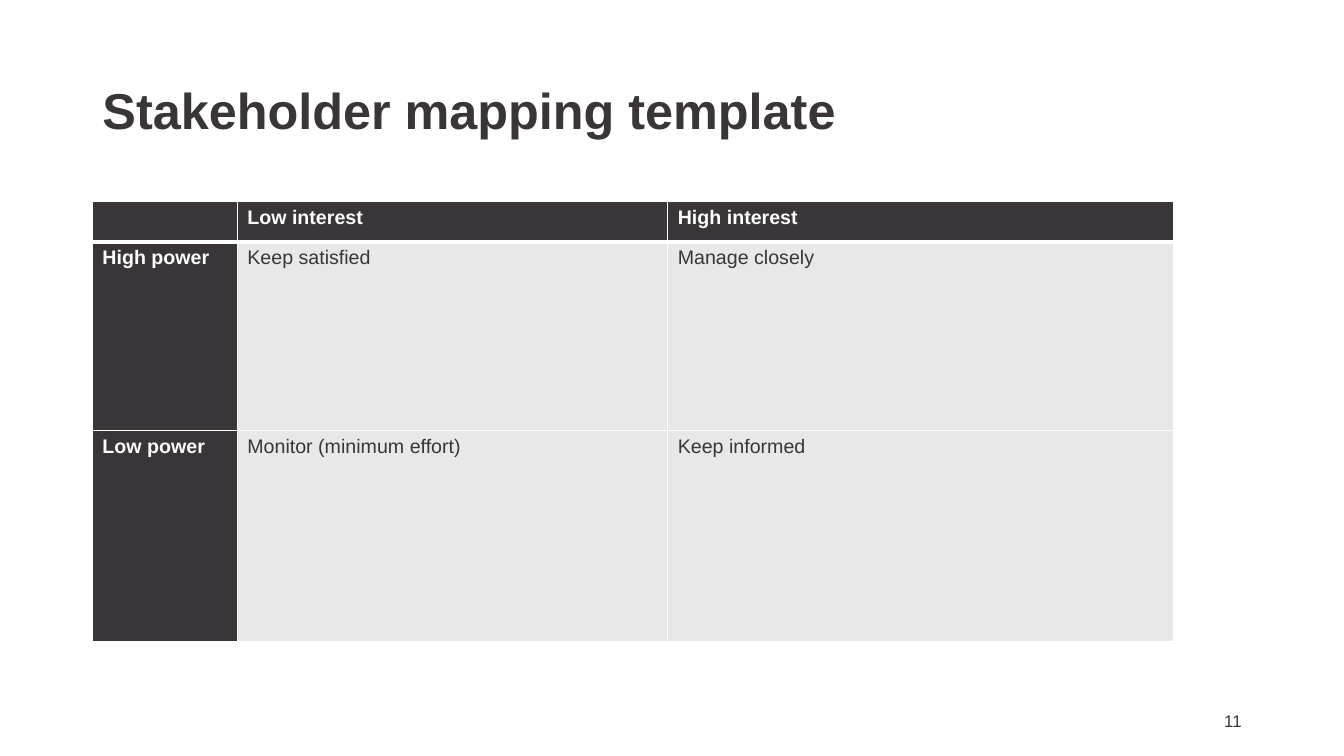
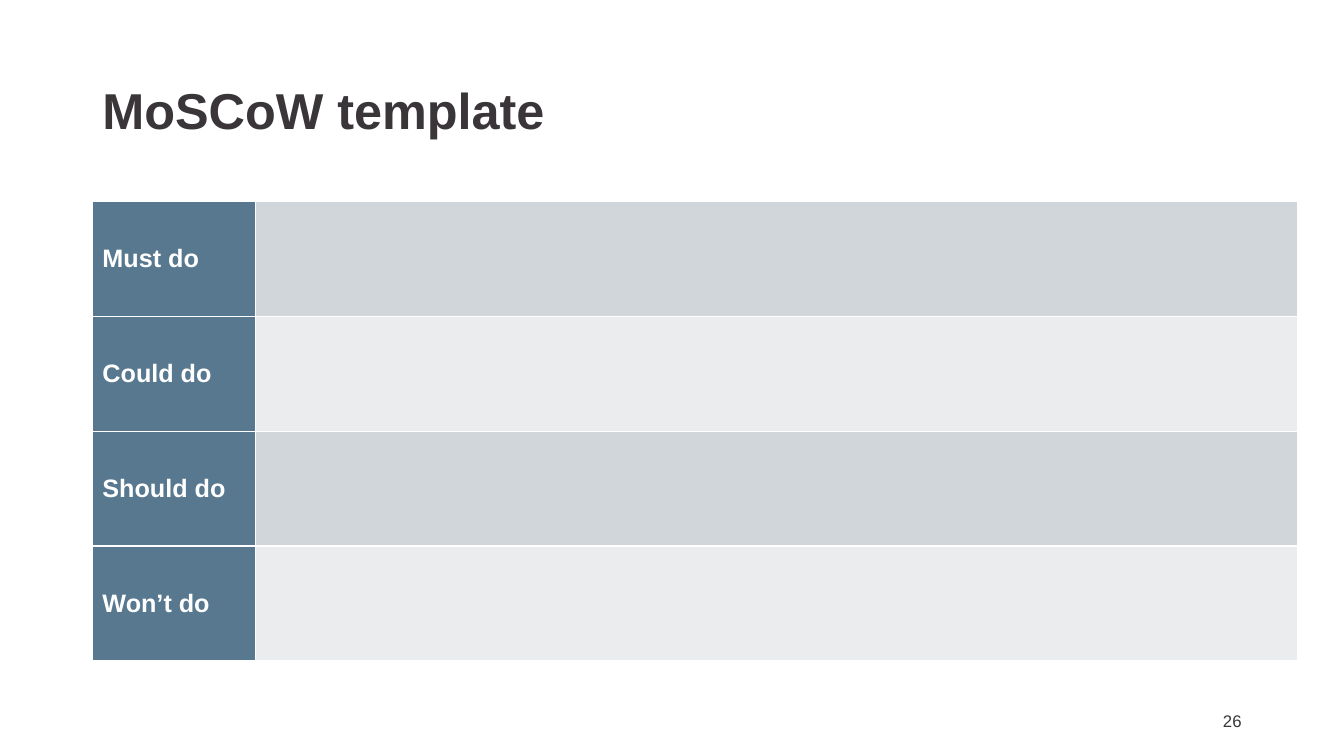
from dataclasses import dataclass

from lxml import etree
from pptx import Presentation
from pptx.dml.color import RGBColor
from pptx.enum import text
from pptx.oxml import ns
from pptx.slide import Slide
from pptx.util import Pt

FONT = "Arial"
WHITE = RGBColor(0xFF, 0xFF, 0xFF)
CHARCOAL = RGBColor(0x39, 0x35, 0x39)
LIGHT_GREY = RGBColor(0xE8, 0xE8, 0xE8)
STEEL_BLUE = RGBColor(0x57, 0x78, 0x8F)
BAND_DARK = RGBColor(0xD1, 0xD6, 0xDB)
BAND_LIGHT = RGBColor(0xEA, 0xEC, 0xEE)

MARGIN_LEFT = 66
CONTENT_WIDTH = 828
TABLE_TOP = 144
TITLE_ONLY_LAYOUT = 5


@dataclass(frozen=True)
class Grid:
    """Table content and look; bands are the body fills, used in turn by row."""

    rows: list[list[str]]
    column_widths: list[float]
    row_heights: list[float]
    heading_fill: RGBColor
    bands: list[RGBColor]
    font_size: int
    anchor: text.MSO_ANCHOR
    has_header_row: bool = False


@dataclass(frozen=True)
class Page:
    title: str
    number: int
    grid: Grid


PAGES = [
    Page(
        "Stakeholder mapping template",
        11,
        Grid(
            rows=[
                ["", "Low interest", "High interest"],
                ["High power", "Keep satisfied", "Manage closely"],
                ["Low power", "Monitor (minimum effort)", "Keep informed"],
            ],
            column_widths=[103.5, 307.5, 361.5],
            row_heights=[28.8, 134.5, 151.2],
            heading_fill=CHARCOAL,
            bands=[LIGHT_GREY],
            font_size=14,
            anchor=text.MSO_ANCHOR.TOP,
            has_header_row=True,
        ),
    ),
    Page(
        "MoSCoW template",
        26,
        Grid(
            rows=[["Must do", ""], ["Could do", ""], ["Should do", ""], ["Won’t do", ""]],
            column_widths=[116.5, 744.5],
            row_heights=[82] * 4,
            heading_fill=STEEL_BLUE,
            bands=[BAND_DARK, BAND_LIGHT],
            font_size=18,
            anchor=text.MSO_ANCHOR.MIDDLE,
        ),
    ),
]


def style_paragraph(paragraph, size: float, color: RGBColor, bold: bool = False) -> None:
    font = paragraph.font
    font.name = FONT
    font.size = Pt(size)
    font.bold = bold
    font.color.rgb = color


def add_title(slide: Slide, title: str) -> None:
    shape = slide.shapes.title
    shape.left, shape.top = Pt(MARGIN_LEFT), Pt(29)
    shape.width, shape.height = Pt(CONTENT_WIDTH), Pt(104)
    frame = shape.text_frame
    frame.text = title
    frame.auto_size = text.MSO_AUTO_SIZE.NONE
    frame.vertical_anchor = text.MSO_ANCHOR.MIDDLE
    paragraph = frame.paragraphs[0]
    paragraph.alignment = text.PP_ALIGN.LEFT
    paragraph.line_spacing = 0.9
    style_paragraph(paragraph, 36, CHARCOAL, bold=True)


def add_page_number(slide: Slide, number: int) -> None:
    width = 216
    left = MARGIN_LEFT + CONTENT_WIDTH - width
    frame = slide.shapes.add_textbox(Pt(left), Pt(500.5), Pt(width), Pt(28.8)).text_frame
    frame.word_wrap = True
    frame.vertical_anchor = text.MSO_ANCHOR.MIDDLE
    frame.text = str(number)
    paragraph = frame.paragraphs[0]
    paragraph.alignment = text.PP_ALIGN.RIGHT
    style_paragraph(paragraph, 12, CHARCOAL)


def set_borders(cell, widths: dict[str, float]) -> None:
    """Draw white borders; widths maps the sides L, R, T, B, in that order, to points."""
    properties = cell._tc.get_or_add_tcPr()
    for position, (side, width) in enumerate(widths.items()):
        line = etree.Element(ns.qn(f"a:ln{side}"), w=str(Pt(width)))
        fill = etree.SubElement(line, ns.qn("a:solidFill"))
        etree.SubElement(fill, ns.qn("a:srgbClr"), val=str(WHITE))
        properties.insert(position, line)


def add_grid(slide: Slide, grid: Grid) -> None:
    table = slide.shapes.add_table(
        len(grid.rows),
        len(grid.column_widths),
        Pt(MARGIN_LEFT),
        Pt(TABLE_TOP),
        Pt(sum(grid.column_widths)),
        Pt(sum(grid.row_heights)),
    ).table
    table.first_row = table.horz_banding = False
    for column, width in zip(table.columns, grid.column_widths):
        column.width = Pt(width)
    for row, height in zip(table.rows, grid.row_heights):
        row.height = Pt(height)

    for row_index, labels in enumerate(grid.rows):
        is_header = grid.has_header_row and row_index == 0
        top = 3 if grid.has_header_row and row_index == 1 else 1
        band = grid.bands[row_index % len(grid.bands)]
        for column_index, label in enumerate(labels):
            is_heading = is_header or column_index == 0
            cell = table.cell(row_index, column_index)
            cell.text = label
            cell.vertical_anchor = grid.anchor
            cell.fill.solid()
            cell.fill.fore_color.rgb = grid.heading_fill if is_heading else band
            set_borders(cell, {"L": 1, "R": 1, "T": top, "B": 3 if is_header else 1})
            style_paragraph(
                cell.text_frame.paragraphs[0],
                grid.font_size,
                WHITE if is_heading else CHARCOAL,
                bold=is_heading,
            )


def main() -> None:
    presentation = Presentation()
    presentation.slide_width, presentation.slide_height = Pt(960), Pt(540)
    for page in PAGES:
        slide = presentation.slides.add_slide(presentation.slide_layouts[TITLE_ONLY_LAYOUT])
        add_title(slide, page.title)
        add_grid(slide, page.grid)
        add_page_number(slide, page.number)
    presentation.save("out.pptx")


if __name__ == "__main__":
    main()
